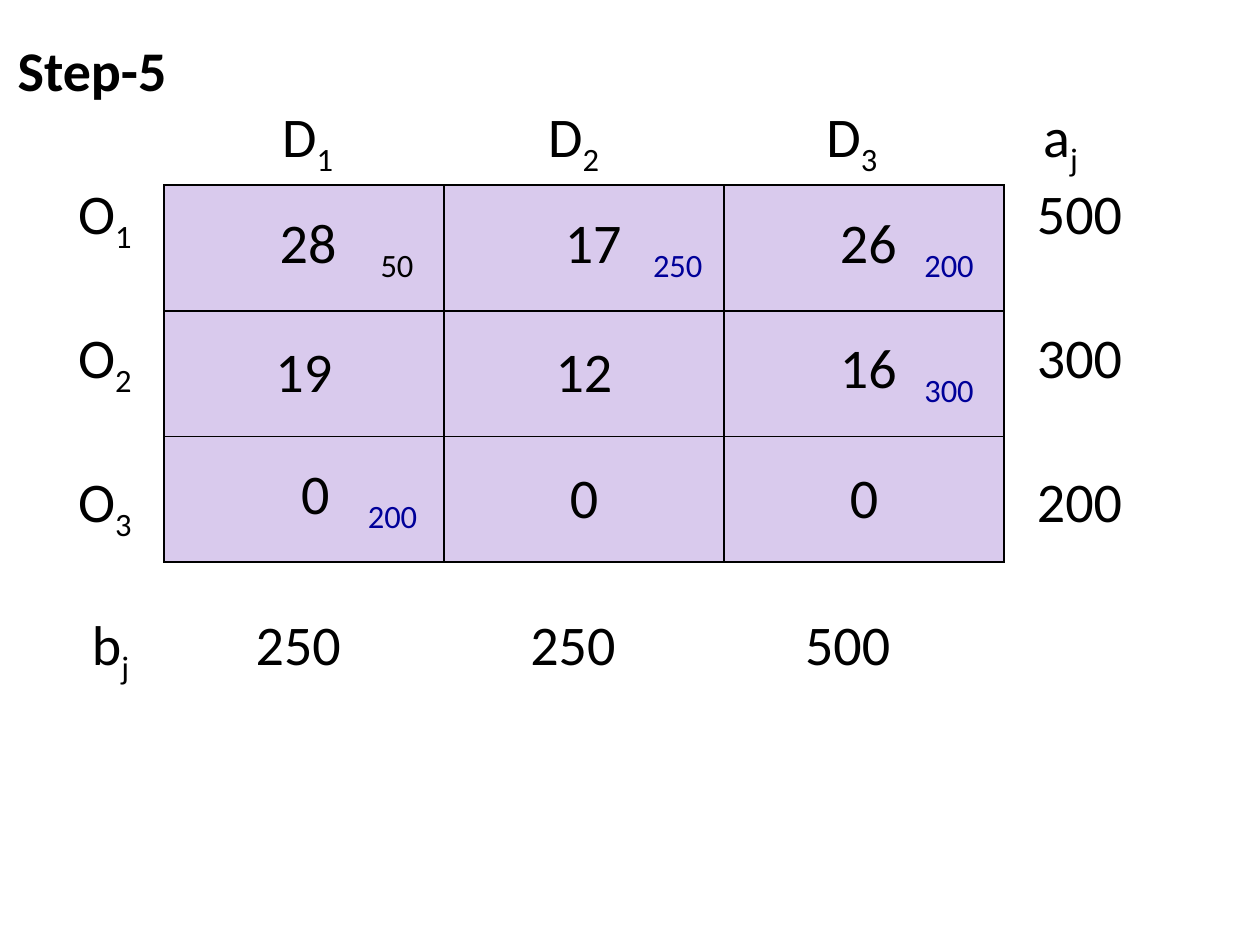
from lxml import etree
from pptx import Presentation
from pptx.dml.color import RGBColor
from pptx.enum.text import MSO_ANCHOR, PP_ALIGN
from pptx.oxml.ns import qn
from pptx.util import Inches, Pt

CENTER, LEFT = PP_ALIGN.CENTER, PP_ALIGN.LEFT
MIDDLE = MSO_ANCHOR.MIDDLE
BLACK, BLUE, LILAC = "000000", "000099", "D9CAED"

# Each cell: cost, allocation, allocation colour, tab stops of the two numbers
CELLS = [
    [("28", "50", BLACK, (0.82, 1.62)), ("17", "250", BLUE, (0.86, 1.56)),
     ("26", "200", BLUE, (0.82, 1.49))],
    [("19",), ("12",), ("16", "300", BLUE, (0.82, 1.49))],
    [("0", "200", BLUE, (0.99, 1.52)), ("0",), ("0",)],
]
SUPPLY = ["500", "300", "200"]
DEMAND = ["250", "250", "500"]
HEADER_X = [2.24, 4.35, 6.56]
HEADER_Y, ROW_Y, ROW_PITCH = 0.81, 1.42, 1.14


def rgb(color):
    return RGBColor.from_string(color)


def add_run(p, text, color=BLACK, bold=False, sub=False):
    r = p.add_run()
    r.text = text
    r.font.name = "Calibri"
    r.font.size = Pt(32)
    r.font.bold = bold
    r.font.color.rgb = rgb(color)
    if sub:
        r._r.get_or_add_rPr().set("baseline", "-25000")


def add_label(s, x, y, text, sub="", bold=False):
    """Place a label, with an optional subscript, by its top left corner."""
    tf = s.shapes.add_textbox(Inches(x), Inches(y), Inches(1.5), Inches(0.6)).text_frame
    tf.word_wrap = True
    tf.margin_left = tf.margin_top = tf.margin_right = tf.margin_bottom = 0
    p = tf.paragraphs[0]
    add_run(p, text, bold=bold)
    if sub:
        add_run(p, sub, sub=True)


def add_tabs(p, stops):
    tabs = etree.SubElement(p._p.get_or_add_pPr(), qn("a:tabLst"))
    for stop in stops:
        etree.SubElement(tabs, qn("a:tab"), pos=str(Inches(stop)), algn="l")


def add_borders(cell):
    tcPr = cell._tc.get_or_add_tcPr()
    for i, side in enumerate(("lnL", "lnR", "lnT", "lnB")):
        ln = etree.Element(qn(f"a:{side}"), w=str(Pt(1)))
        fill = etree.SubElement(ln, qn("a:solidFill"))
        etree.SubElement(fill, qn("a:srgbClr"), val=BLACK)
        tcPr.insert(i, ln)


def fill_cell(cell, cost, allocation="", color=BLACK, stops=()):
    cell.fill.solid()
    cell.fill.fore_color.rgb = rgb(LILAC)
    add_borders(cell)
    cell.vertical_anchor = MIDDLE
    p = cell.text_frame.paragraphs[0]
    if allocation:
        p.alignment = LEFT
        add_tabs(p, stops)
        add_run(p, "\t" + cost + "\t")
        add_run(p, allocation, color, sub=True)
    else:
        p.alignment = CENTER
        add_run(p, cost)


def add_cost_table(s):
    table = s.shapes.add_table(3, 3, Inches(1.3), Inches(1.47),
                               Inches(6.67), Inches(2.99)).table
    table.first_row = table.horz_banding = False
    for i, row in enumerate(CELLS):
        for j, values in enumerate(row):
            fill_cell(table.cell(i, j), *values)


def main():
    prs = Presentation()
    prs.slide_width, prs.slide_height = Inches(10), Inches(7.5)
    s = prs.slides.add_slide(prs.slide_layouts[6])

    add_label(s, 0.14, 0.28, "Step-5", bold=True)
    for i, x in enumerate(HEADER_X, 1):
        add_label(s, x, HEADER_Y, "D", str(i))
    add_label(s, 8.28, HEADER_Y, "a", "j")
    for i, supply in enumerate(SUPPLY):
        y = ROW_Y + i * ROW_PITCH
        add_label(s, 0.62, y, "O", str(i + 1))
        add_label(s, 8.23, y, supply)
    demand_y = ROW_Y + len(SUPPLY) * ROW_PITCH
    add_label(s, 0.73, demand_y, "b", "j")
    for i, demand in enumerate(DEMAND):
        add_label(s, 2.03 + i * 2.18, demand_y, demand)
    add_cost_table(s)

    prs.save("out.pptx")


if __name__ == "__main__":
    main()
